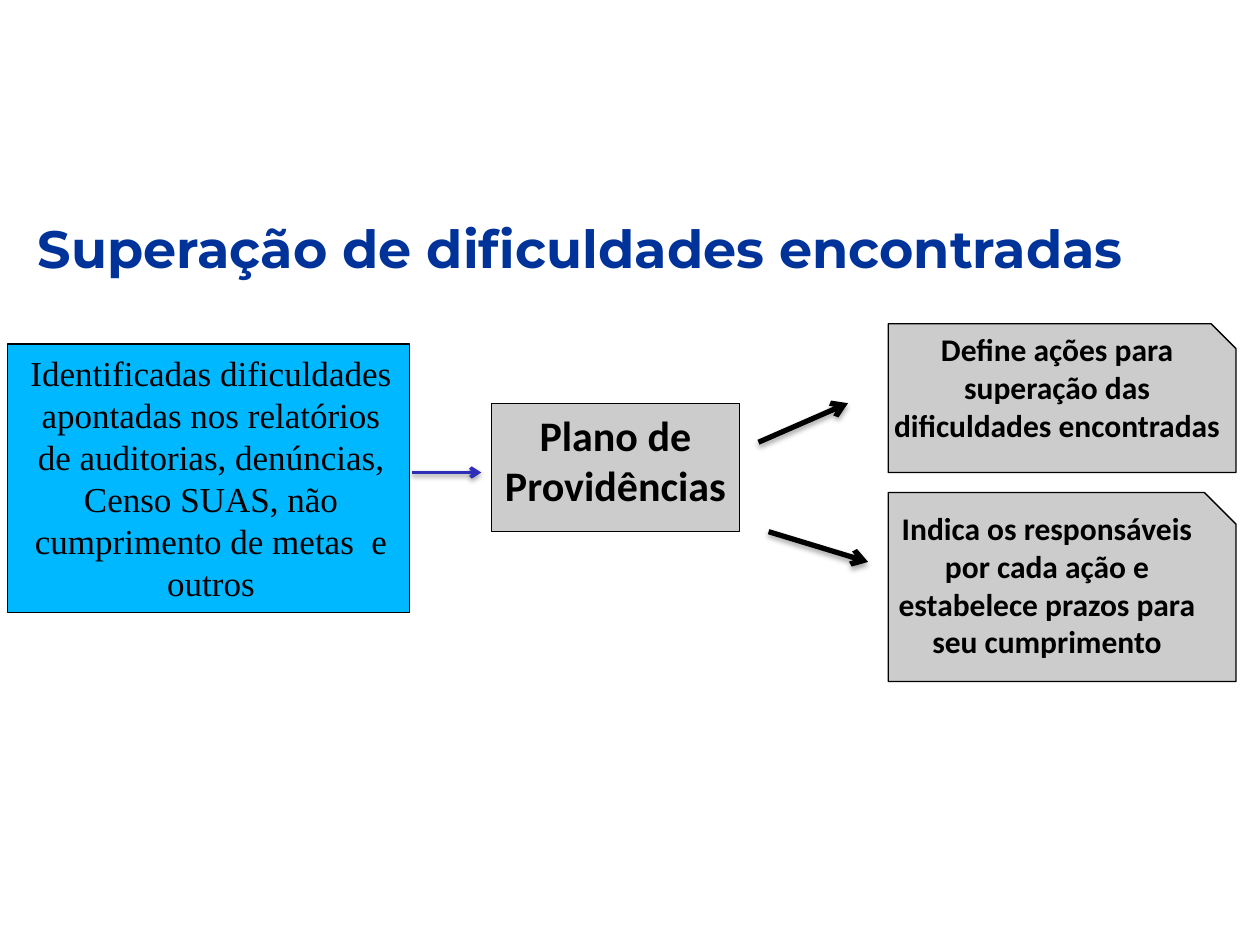
"""Build the slide on overcoming difficulties with an action plan."""
from lxml import etree
from pptx import Presentation
from pptx.dml.color import RGBColor
from pptx.enum import shapes, text
from pptx.oxml import ns
from pptx.util import Inches, Pt

BLACK = RGBColor(0x00, 0x00, 0x00)
GREY = RGBColor(0xCC, 0xCC, 0xCC)
SKY = RGBColor(0x00, 0xB8, 0xFF)
NAVY = RGBColor(0x00, 0x33, 0x99)
INDIGO = RGBColor(0x2D, 0x2D, 0xB9)


def write(box, wording, size, font="Calibri", color=BLACK, bold=True,
          align=text.PP_ALIGN.CENTER, spacing=None):
    para = box.text_frame.paragraphs[0]
    para.alignment = align
    if spacing:
        para.line_spacing = spacing
    span = para.add_run()
    span.text = wording
    span.font.size = Pt(size)
    span.font.name = font
    span.font.bold = bold
    span.font.color.rgb = color


class SlideBuilder:
    def __init__(self, page, outline=BLACK, outline_width=0.75):
        self.page = page
        self.outline = outline
        self.outline_width = outline_width

    def panel(self, kind, area, fill):
        shape = self.page.shapes.add_shape(kind, *map(Inches, area))
        shape.shadow.inherit = False
        shape.fill.solid()
        shape.fill.fore_color.rgb = fill
        shape.line.color.rgb = self.outline
        shape.line.width = Pt(self.outline_width)

    def label(self, wording, area, size, anchor=text.MSO_ANCHOR.TOP,
              fit=text.MSO_AUTO_SIZE.SHAPE_TO_FIT_TEXT, **style):
        box = self.page.shapes.add_textbox(*map(Inches, area))
        frame = box.text_frame
        frame.word_wrap = True
        frame.auto_size = fit
        frame.vertical_anchor = anchor
        write(box, wording, size, **style)

    def arrow(self, start, end, color=BLACK, width=3, distance=1.8, opacity=35):
        line = self.page.shapes.add_connector(
            shapes.MSO_CONNECTOR.STRAIGHT, *map(Inches, start + end))
        line.line.color.rgb = color
        line.line.width = Pt(width)
        properties = line.element.spPr
        stroke = properties.find(ns.qn("a:ln"))
        etree.SubElement(stroke, ns.qn("a:tailEnd"), type="arrow")
        effects = etree.SubElement(properties, ns.qn("a:effectLst"))
        shadow = etree.SubElement(
            effects, ns.qn("a:outerShdw"), blurRad=str(Pt(3.1)),
            dist=str(Pt(distance)), dir="5400000", rotWithShape="0")
        tint = etree.SubElement(shadow, ns.qn("a:srgbClr"), val=str(BLACK))
        etree.SubElement(tint, ns.qn("a:alpha"), val=str(opacity * 1000))


def main():
    deck = Presentation()
    deck.slide_width, deck.slide_height = Inches(10), Inches(7.5)
    page = deck.slides.add_slide(deck.slide_layouts[6])
    builder = SlideBuilder(page)
    rectangle = shapes.MSO_SHAPE.RECTANGLE
    snipped = shapes.MSO_SHAPE.SNIP_1_RECTANGLE
    middle = text.MSO_ANCHOR.MIDDLE

    builder.panel(snipped, (7.05, 3.91, 2.76, 1.5), GREY)
    builder.panel(snipped, (7.05, 2.57, 2.76, 1.18), GREY)
    builder.panel(rectangle, (3.9, 3.2, 1.97, 1.02), GREY)
    builder.panel(rectangle, (0.06, 2.73, 3.19, 2.13), SKY)

    builder.label("Superação de dificuldades encontradas", (0.2, 1.37, 9.45, 1.1), 30,
                  anchor=middle, fit=text.MSO_AUTO_SIZE.NONE, font="Montserrat",
                  color=NAVY, align=text.PP_ALIGN.LEFT, spacing=1.18)
    builder.label("Identificadas dificuldades apontadas nos relatórios de auditorias, "
                  "denúncias, Censo SUAS, não cumprimento de metas  e outros",
                  (0.1, 2.73, 3.15, 2.12), 20, anchor=middle,
                  font="Times New Roman", bold=False)
    builder.label("Plano de Providências", (3.9, 3.2, 1.97, 0.91), 24)
    builder.label("Define ações para superação das dificuldades encontradas",
                  (6.97, 2.57, 2.84, 1.01), 18)
    builder.label("Indica os responsáveis por cada ação e estabelece prazos para "
                  "seu cumprimento", (6.97, 3.99, 2.68, 1.31), 18)

    builder.arrow((3.27, 3.75), (3.82, 3.75), INDIGO, 2, distance=1.6, opacity=38)
    builder.arrow((6.02, 3.51), (6.73, 3.2))
    builder.arrow((6.1, 4.22), (6.89, 4.46))

    deck.save("out.pptx")


if __name__ == "__main__":
    main()
